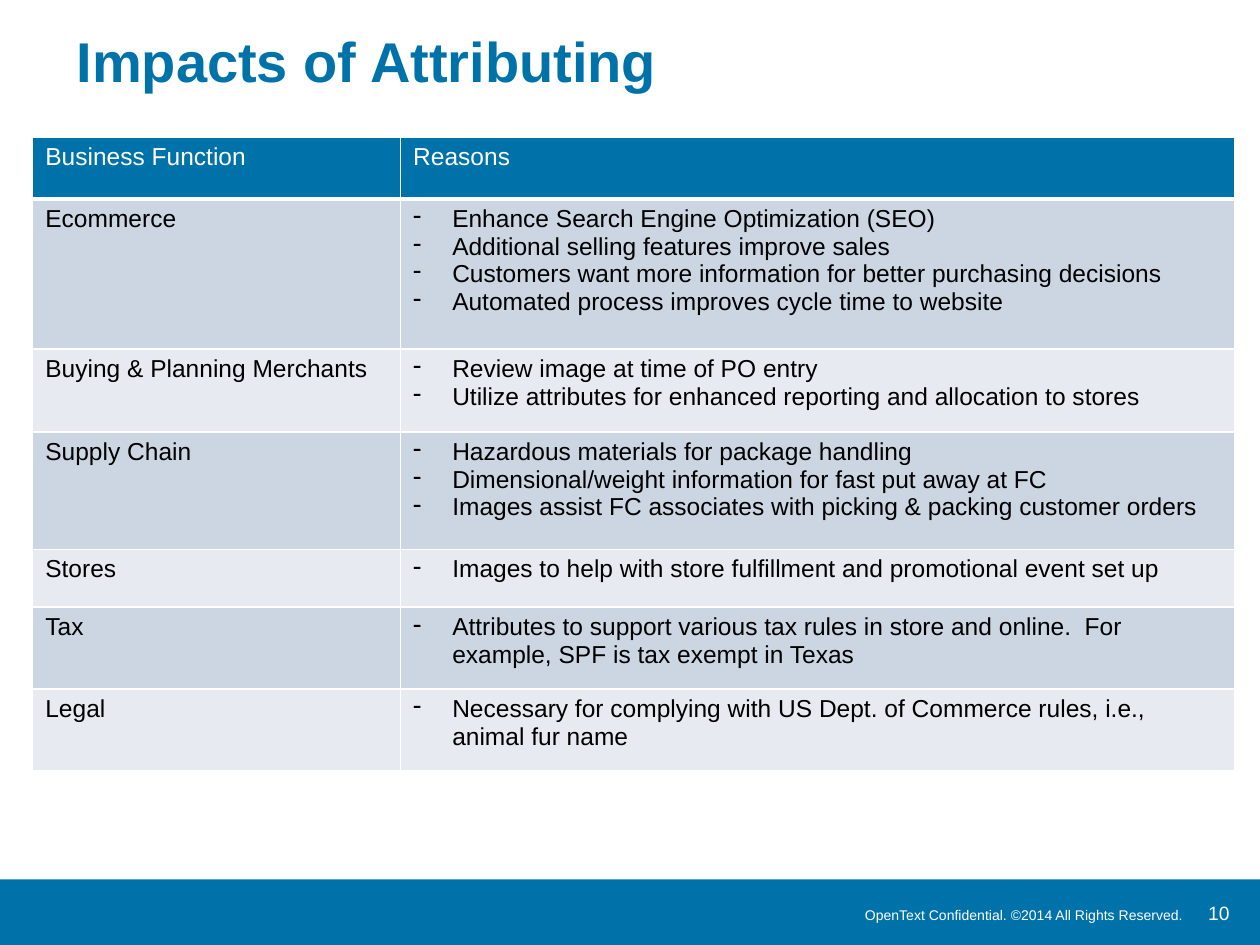
from lxml.etree import SubElement
from pptx import Presentation
from pptx.dml.color import RGBColor
from pptx.enum.shapes import MSO_SHAPE
from pptx.enum.text import MSO_ANCHOR, PP_ALIGN
from pptx.oxml.ns import qn
from pptx.util import Inches, Pt

BLUE = RGBColor(0x00, 0x72, 0xAA)
WHITE = RGBColor(0xFF, 0xFF, 0xFF)
BLACK = RGBColor(0x00, 0x00, 0x00)
BAND_DARK = RGBColor(0xCC, 0xD5, 0xE2)
BAND_LIGHT = RGBColor(0xE7, 0xEB, 0xF1)

HEADER = ("Business Function", "Reasons")
ROWS = [
    ("Ecommerce", 1.19, [
        "Enhance Search Engine Optimization (SEO)",
        "Additional selling features improve sales",
        "Customers want more information for better purchasing decisions",
        "Automated process improves cycle time to website"]),
    ("Buying & Planning Merchants", 0.66, [
        "Review image at time of PO entry",
        "Utilize attributes for enhanced reporting and allocation to stores"]),
    ("Supply Chain", 0.93, [
        "Hazardous materials for package handling",
        "Dimensional/weight information for fast put away at FC",
        "Images assist FC associates with picking & packing customer orders"]),
    ("Stores", 0.46, [
        "Images to help with store fulfillment and promotional event set up"]),
    ("Tax", 0.65, [
        "Attributes to support various tax rules in store and online.  For "
        "example, SPF is tax exempt in Texas"]),
    ("Legal", 0.65, [
        "Necessary for complying with US Dept. of Commerce rules, i.e., "
        "animal fur name"]),
]


def write(tf, lines, size=14, color=BLACK, bold=False, align=PP_ALIGN.LEFT,
          anchor=MSO_ANCHOR.TOP, dashed=False):
    """Fill a text frame with one paragraph per line, with dash bullets if asked."""
    tf.word_wrap = True
    tf.vertical_anchor = anchor
    for i, line in enumerate(lines):
        p = tf.paragraphs[0] if i == 0 else tf.add_paragraph()
        p.alignment = align
        if dashed:
            pPr = p._p.get_or_add_pPr()
            pPr.set("marL", str(Inches(0.31)))
            pPr.set("indent", str(-Inches(0.31)))
            SubElement(pPr, qn("a:buChar"), char="-")
        r = p.add_run()
        r.text = line
        r.font.name = "Arial"
        r.font.size = Pt(size)
        r.font.bold = bold
        r.font.color.rgb = color


def style_cell(cell, fill, bottom=1):
    """Give a cell white borders and a solid fill."""
    tcPr = cell._tc.get_or_add_tcPr()
    for side, width in (("L", 1), ("R", 1), ("T", 1), ("B", bottom)):
        ln = SubElement(tcPr, qn(f"a:ln{side}"), w=str(Pt(width)))
        SubElement(SubElement(ln, qn("a:solidFill")), qn("a:srgbClr"), val=str(WHITE))
    cell.fill.solid()
    cell.fill.fore_color.rgb = fill


prs = Presentation()
prs.slide_width = Inches(10)
prs.slide_height = Inches(7.5)
s = prs.slides.add_slide(prs.slide_layouts[6])

# Footer
bar = s.shapes.add_shape(MSO_SHAPE.RECTANGLE, Inches(-0.01), Inches(6.98),
                         Inches(10.01), Inches(0.53))
bar.shadow.inherit = False
bar.fill.solid()
bar.fill.fore_color.rgb = BLUE
bar.line.fill.background()

notice = s.shapes.add_textbox(Inches(6.34), Inches(7.14), Inches(3.15), Inches(0.24))
write(notice.text_frame, ["OpenText Confidential. ©2014 All Rights Reserved."],
      size=8, color=WHITE, align=PP_ALIGN.RIGHT, anchor=MSO_ANCHOR.MIDDLE)
number = s.shapes.add_textbox(Inches(9.49), Inches(7.1), Inches(0.51), Inches(0.29))
write(number.text_frame, ["10"], size=11, color=WHITE)

# Title
title = s.shapes.add_textbox(Inches(0.51), Inches(0.16), Inches(9), Inches(0.63))
write(title.text_frame, ["Impacts of Attributing"], size=32, color=BLUE, bold=True,
      anchor=MSO_ANCHOR.MIDDLE)

# Table
table = s.shapes.add_table(len(ROWS) + 1, 2, Inches(0.26), Inches(1.09),
                           Inches(9.53), Inches(5.02)).table
table.columns[0].width = Inches(2.92)
table.columns[1].width = Inches(6.62)
table.rows[0].height = Inches(0.49)
for col, heading in enumerate(HEADER):
    cell = table.cell(0, col)
    style_cell(cell, BLUE, bottom=3)
    write(cell.text_frame, [heading], color=WHITE)

for row, (function, height, reasons) in enumerate(ROWS, start=1):
    table.rows[row].height = Inches(height)
    for col, lines in enumerate(([function], reasons)):
        cell = table.cell(row, col)
        style_cell(cell, BAND_DARK if row % 2 else BAND_LIGHT)
        write(cell.text_frame, lines, dashed=col == 1)

prs.save("out.pptx")
